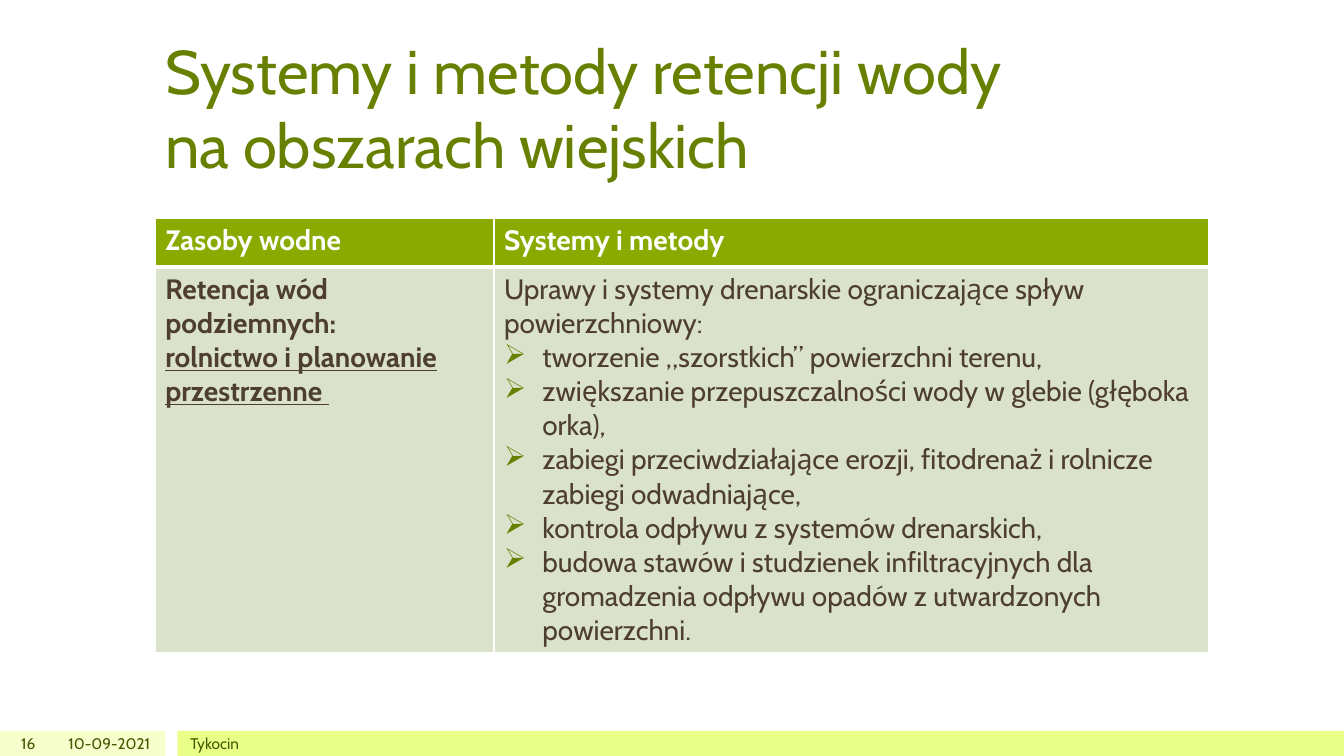
import dataclasses

import lxml.etree
import pptx
import pptx.dml.color
import pptx.enum.shapes
import pptx.enum.text
import pptx.oxml.ns
import pptx.util

ANCHOR = pptx.enum.text.MSO_ANCHOR
ALIGN = pptx.enum.text.PP_ALIGN
COLUMNS, ROWS = 160, 90


@dataclasses.dataclass(frozen=True)
class Theme:
    font: str = "Cabin"
    title_size: int = 44
    body_size: int = 20
    footer_size: int = 11
    title: str = "688000"
    bullet: str = "688000"
    header_fill: str = "8BAA00"
    header_text: str = "FFFFFF"
    body_fill: str = "DAE2CC"
    body_text: str = "4D3E2F"
    border: str = "FFFFFF"
    pale_bar: str = "F6FFCC"
    bright_bar: str = "E9FF88"
    footer_text: str = "455500"


def color(value):
    return pptx.dml.color.RGBColor.from_string(value)


def add_xml(parent, tag, **attributes):
    return lxml.etree.SubElement(parent, pptx.oxml.ns.qn(tag), attributes)


class SlideBuilder:
    def __init__(self, deck, theme):
        self.theme = theme
        self.unit_x = deck.slide_width / COLUMNS
        self.unit_y = deck.slide_height / ROWS
        self.page = deck.slides.add_slide(deck.slide_layouts[6])

    def x(self, columns):
        return round(columns * self.unit_x)

    def y(self, rows):
        return round(rows * self.unit_y)

    def place(self, left, top, width, height):
        return self.x(left), self.y(top), self.x(width), self.y(height)

    def bar(self, area, fill):
        box = self.page.shapes.add_shape(
            pptx.enum.shapes.MSO_SHAPE.RECTANGLE, *self.place(*area))
        box.shadow.inherit = False
        box.fill.solid()
        box.fill.fore_color.rgb = color(fill)
        box.line.fill.background()

    def fill_para(self, para, text, size, text_color, **formats):
        para.text = text
        formats = {"name": self.theme.font, "size": pptx.util.Pt(size), **formats}
        for span in para.runs:
            for name, value in formats.items():
                setattr(span.font, name, value)
            span.font.color.rgb = color(text_color)

    def text(self, area, text, size, text_color, anchor=ANCHOR.MIDDLE, align=ALIGN.LEFT):
        frame = self.page.shapes.add_textbox(*self.place(*area)).text_frame
        frame.word_wrap = True
        frame.vertical_anchor = anchor
        para = frame.paragraphs[0]
        para.alignment = align
        self.fill_para(para, text, size, text_color)

    def bullet(self, para):
        properties = para._p.get_or_add_pPr()
        indent = pptx.util.Inches(0.38)
        properties.set("marL", str(indent))
        properties.set("indent", str(-indent))
        add_xml(add_xml(properties, "a:buClr"), "a:srgbClr", val=self.theme.bullet)
        add_xml(properties, "a:buChar", char="➢")

    def borders(self, cell, **points):
        properties = cell._tc.get_or_add_tcPr()
        for side in "LRTB":
            width = pptx.util.Pt(points.get(side, 1))
            line = add_xml(properties, f"a:ln{side}", w=str(width))
            add_xml(add_xml(line, "a:solidFill"), "a:srgbClr", val=self.theme.border)

    def cell(self, cell, lines, fill, text_color, **edges):
        self.borders(cell, **edges)
        cell.fill.solid()
        cell.fill.fore_color.rgb = color(fill)
        frame = cell.text_frame
        for index, (text, bulleted, formats) in enumerate(lines):
            para = frame.add_paragraph() if index else frame.paragraphs[0]
            if bulleted:
                self.bullet(para)
            self.fill_para(para, text, self.theme.body_size, text_color, **formats)

    def table(self, left, top, widths, heights, header, body):
        area = self.place(left, top, sum(widths), sum(heights))
        table = self.page.shapes.add_table(len(heights), len(widths), *area).table
        for column, width in zip(table.columns, widths):
            column.width = self.x(width)
        for row, height in zip(table.rows, heights):
            row.height = self.y(height)
        for index, (heading, lines) in enumerate(zip(header, body)):
            self.cell(table.cell(0, index), [(heading, False, {"bold": True})],
                      self.theme.header_fill, self.theme.header_text, B=3)
            self.cell(table.cell(1, index), lines,
                      self.theme.body_fill, self.theme.body_text, T=3)


def main():
    deck = pptx.Presentation()
    deck.slide_width = pptx.util.Inches(13.33)
    deck.slide_height = pptx.util.Inches(7.5)
    theme = Theme()
    slide = SlideBuilder(deck, theme)

    slide.bar((0, 87, 19.68, 3), theme.pale_bar)
    slide.bar((21.12, 87, 138.88, 3), theme.bright_bar)
    slide.text((18.48, 6.6, 123, 15.48),
               "Systemy i metody retencji wody \vna obszarach wiejskich",
               theme.title_size, theme.title, ANCHOR.BOTTOM)

    resources = [
        ("Retencja wód podziemnych:", False, {"bold": True}),
        ("rolnictwo i planowanie przestrzenne ", False, {"bold": True, "underline": True}),
    ]
    methods = [
        "tworzenie „szorstkich” powierzchni terenu,",
        "zwiększanie przepuszczalności wody w glebie (głęboka orka),",
        "zabiegi przeciwdziałające erozji, fitodrenaż i rolnicze zabiegi odwadniające,",
        "kontrola odpływu z systemów drenarskich,",
        "budowa stawów i studzienek infiltracyjnych dla gromadzenia odpływu opadów "
        "z utwardzonych powierzchni.",
    ]
    intro = "Uprawy i systemy drenarskie ograniczające spływ powierzchniowy:"
    systems = [(intro, False, {})] + [(method, True, {}) for method in methods]
    slide.table(18.48, 26.04, (40.32, 85.08), (5.76, 45.84),
                ("Zasoby wodne", "Systemy i metody"), (resources, systems))

    footers = [
        (6, 13.08, "10-09-2021", ALIGN.RIGHT),
        (21.48, 120, "Tykocin", ALIGN.LEFT),
        (0, 5.4, "16", ALIGN.RIGHT),
    ]
    for left, width, label, align in footers:
        slide.text((left, 87, width, 3), label,
                   theme.footer_size, theme.footer_text, align=align)

    deck.save("out.pptx")


if __name__ == "__main__":
    main()
